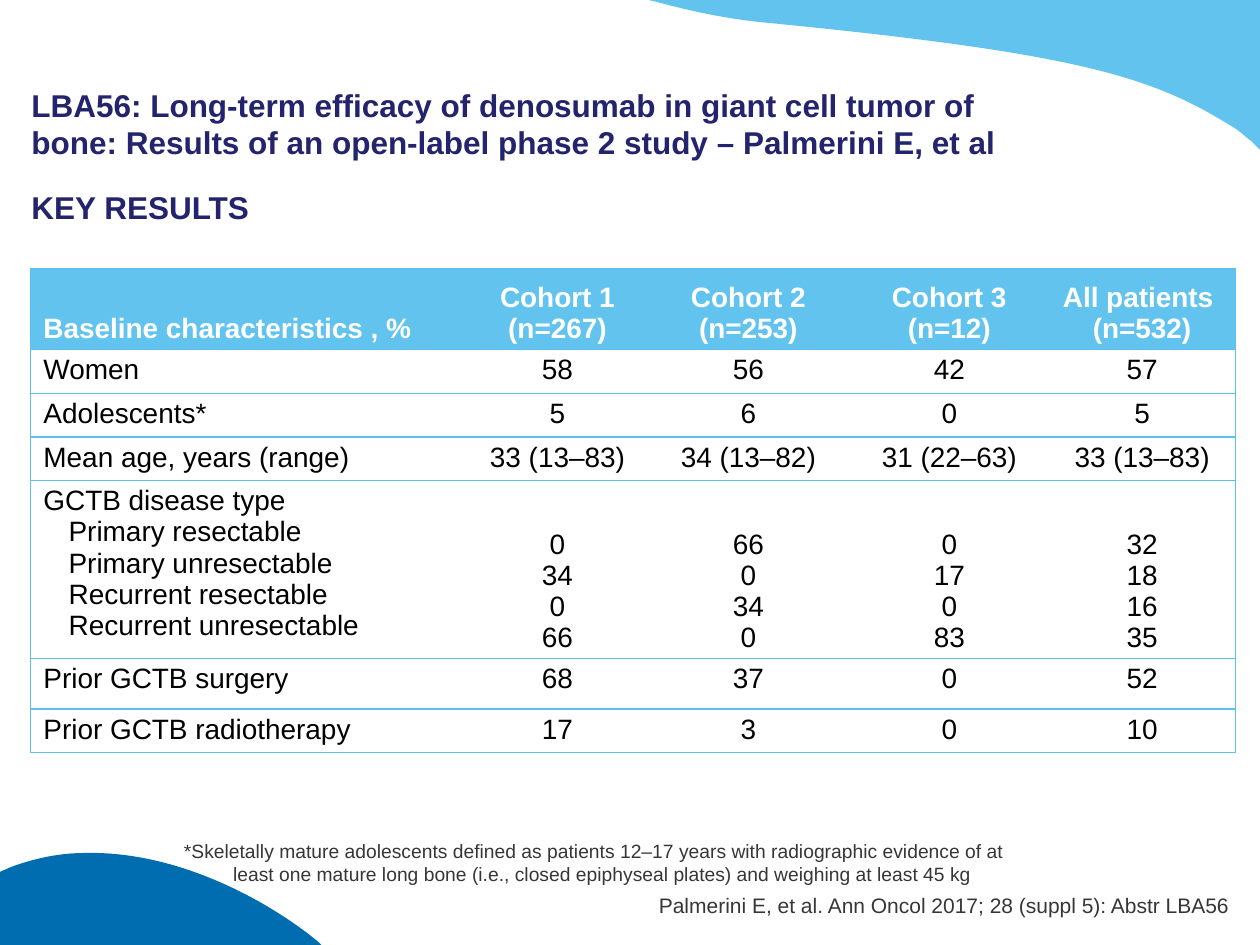
from pptx import Presentation
from pptx.util import Inches, Pt
from pptx.dml.color import RGBColor
from pptx.enum.text import PP_ALIGN, MSO_ANCHOR
from lxml.etree import SubElement
from pptx.oxml.ns import qn

HUES = {
    "sky": "62C4EE", "deep": "006DB0", "navy": "23246D", "grey": "363636",
    "rule": "5CC1EC", "white": "FFFFFF", "black": "000000",
}
WIDE, HIGH = 10, 7.5
EDGE = 0.25
COLS = [3.47, 1.42, 1.61, 1.58, 1.48]
LINE = 0.32
ROWS = [0.64, LINE, LINE, LINE, 1.31, 0.4, LINE]
DATA = [
    ["Baseline characteristics , %", "Cohort 1\n(n=267)", "Cohort 2\n(n=253)",
     "Cohort 3\n(n=12)", "All patients \n(n=532)"],
    ["Women", "58", "56", "42", "57"],
    ["Adolescents*", "5", "6", "0", "5"],
    ["Mean age, years (range)", "33 (13–83)", "34 (13–82)", "31 (22–63)", "33 (13–83)"],
    ["GCTB disease type\nPrimary resectable\nPrimary unresectable\n"
     "Recurrent resectable\nRecurrent unresectable",
     "0\n34\n0\n66", "66\n0\n34\n0", "0\n17\n0\n83", "32\n18\n16\n35"],
    ["Prior GCTB surgery", "68", "37", "0", "52"],
    ["Prior GCTB radiotherapy", "17", "3", "0", "10"],
]
SWOOSH = [
    [(5.15, 0)], [(10, 0)], [(10, 1.19)], [(9.93, 1.12)],
    [(9.89, 1.09), (9.86, 1.06), (9.82, 1.03)],
    [(9.17, 0.62), (8.64, 0.43), (6.08, 0.18)],
    [(5.77, 0.15), (5.49, 0.09), (5.23, 0.02)],
]
HILL = [
    [(0.67, 6.77)], [(1.45, 6.75), (2.18, 7.19), (2.52, 7.47)],
    [(2.55, 7.5)], [(0, 7.5)], [(0, 6.92)], [(0.09, 6.88)],
    [(0.28, 6.81), (0.48, 6.77), (0.67, 6.77)],
]


def color(name):
    return RGBColor.from_string(HUES[name])


def bend(shape, path):
    legs = iter(list(shape._element.iter(qn("a:lnTo"))))
    for seg in path[1:]:
        first, *rest = [next(legs) for dot in seg]
        if rest:
            first.tag = qn("a:cubicBezTo")
            for leg in rest:
                first.append(leg[0])
                leg.getparent().remove(leg)


def add_wave(slide, path, hue):
    dots = [(Inches(x), Inches(y)) for seg in path for x, y in seg]
    pen = slide.shapes.build_freeform(*dots[0])
    pen.add_line_segments(dots[1:], close=True)
    wave = pen.convert_to_shape()
    bend(wave, path)
    wave.shadow.inherit = False
    wave.fill.solid()
    wave.fill.fore_color.rgb = color(hue)
    wave.line.fill.background()


def style(frame, size, hue, bold=False, align=PP_ALIGN.LEFT):
    for para in frame.paragraphs:
        para.alignment = align
        for run in para.runs:
            font = run.font
            font.name, font.size, font.bold = "Arial", Pt(size), bold
            font.color.rgb = color(hue)
        SubElement(para._p, qn("a:endParaRPr"), sz=str(size * 100))


def indent(para, left):
    para._p.get_or_add_pPr().set("marL", str(Inches(left)))


def add_text(slide, box, text, size, hue, bold=False, align=PP_ALIGN.LEFT,
             anchor=MSO_ANCHOR.BOTTOM, pads=(0, 0)):
    frame = slide.shapes.add_textbox(*map(Inches, box)).text_frame
    frame.word_wrap = True
    frame.vertical_anchor = anchor
    frame.margin_left = frame.margin_right = 0
    frame.margin_top, frame.margin_bottom = map(Inches, pads)
    frame.text = text
    style(frame, size, hue, bold, align)
    return frame


def add_rule(cell, side, shown):
    line = SubElement(cell._tc.get_or_add_tcPr(), qn("a:ln" + side), w=str(Pt(0.75)))
    if shown:
        fill = SubElement(line, qn("a:solidFill"))
        SubElement(fill, qn("a:srgbClr"), val=HUES["rule"])
    else:
        SubElement(line, qn("a:noFill"))


def fill_cell(cell, text, row, col):
    head = row == 0
    cell.text_frame.text = text
    cell.margin_left = cell.margin_right = Inches(0.1)
    cell.margin_top = cell.margin_bottom = Inches(0.04)
    low = head or (col and "\n" in text)
    cell.vertical_anchor = MSO_ANCHOR.BOTTOM if low else MSO_ANCHOR.TOP
    style(cell.text_frame, 16, "white" if head else "black", head,
          PP_ALIGN.CENTER if col else PP_ALIGN.LEFT)
    if col == 0:
        for para in cell.text_frame.paragraphs[1:]:
            indent(para, 0.2)
    last = len(COLS) - 1
    for side, shown in (("L", col == 0), ("R", col == last), ("T", True), ("B", True)):
        add_rule(cell, side, shown)
    if head:
        cell.fill.solid()
        cell.fill.fore_color.rgb = color("sky")
    else:
        cell.fill.background()


def add_grid(slide, left, top):
    box = map(Inches, (left, top, sum(COLS), sum(ROWS)))
    table = slide.shapes.add_table(len(ROWS), len(COLS), *box).table
    table.first_row = table.horz_banding = False
    for col, width in zip(table.columns, COLS):
        col.width = Inches(width)
    for row, height in zip(table.rows, ROWS):
        row.height = Inches(height)
    for i, texts in enumerate(DATA):
        for j, text in enumerate(texts):
            fill_cell(table.cell(i, j), text, i, j)


def main():
    deck = Presentation()
    deck.slide_width, deck.slide_height = Inches(WIDE), Inches(HIGH)
    slide = deck.slides.add_slide(deck.slide_layouts[6])
    add_wave(slide, SWOOSH, "sky")
    add_wave(slide, HILL, "deep")
    add_text(slide, (EDGE, 1.44, WIDE - 2 * EDGE, 5.81), "KEY RESULTS", 18, "navy", True,
             anchor=MSO_ANCHOR.TOP, pads=(0.05, 0.05))
    add_text(slide, (5.06, 7.08, 4.7, 0.2),
             "Palmerini E, et al. Ann Oncol 2017; 28 (suppl 5): Abstr LBA56",
             12, "grey", align=PP_ALIGN.RIGHT).word_wrap = False
    add_text(slide, (EDGE, EDGE, 7.8, 1.03),
             "LBA56: Long-term efficacy of denosumab in giant cell tumor of bone: "
             "Results of an open-label phase 2 study – Palmerini E, et al",
             18, "navy", True, pads=(0.05, 0))
    add_grid(slide, 0.245, 2.135)
    note = add_text(slide, (1.46, 6.66, 6.54, 0.37),
                    "*Skeletally mature adolescents defined as patients 12–17 years "
                    "with radiographic evidence of at\n"
                    "least one mature long bone (i.e., closed epiphyseal plates) "
                    "and weighing at least 45 kg", 11, "grey")
    indent(note.paragraphs[1], 0.39)
    deck.save("out.pptx")


if __name__ == "__main__":
    main()
